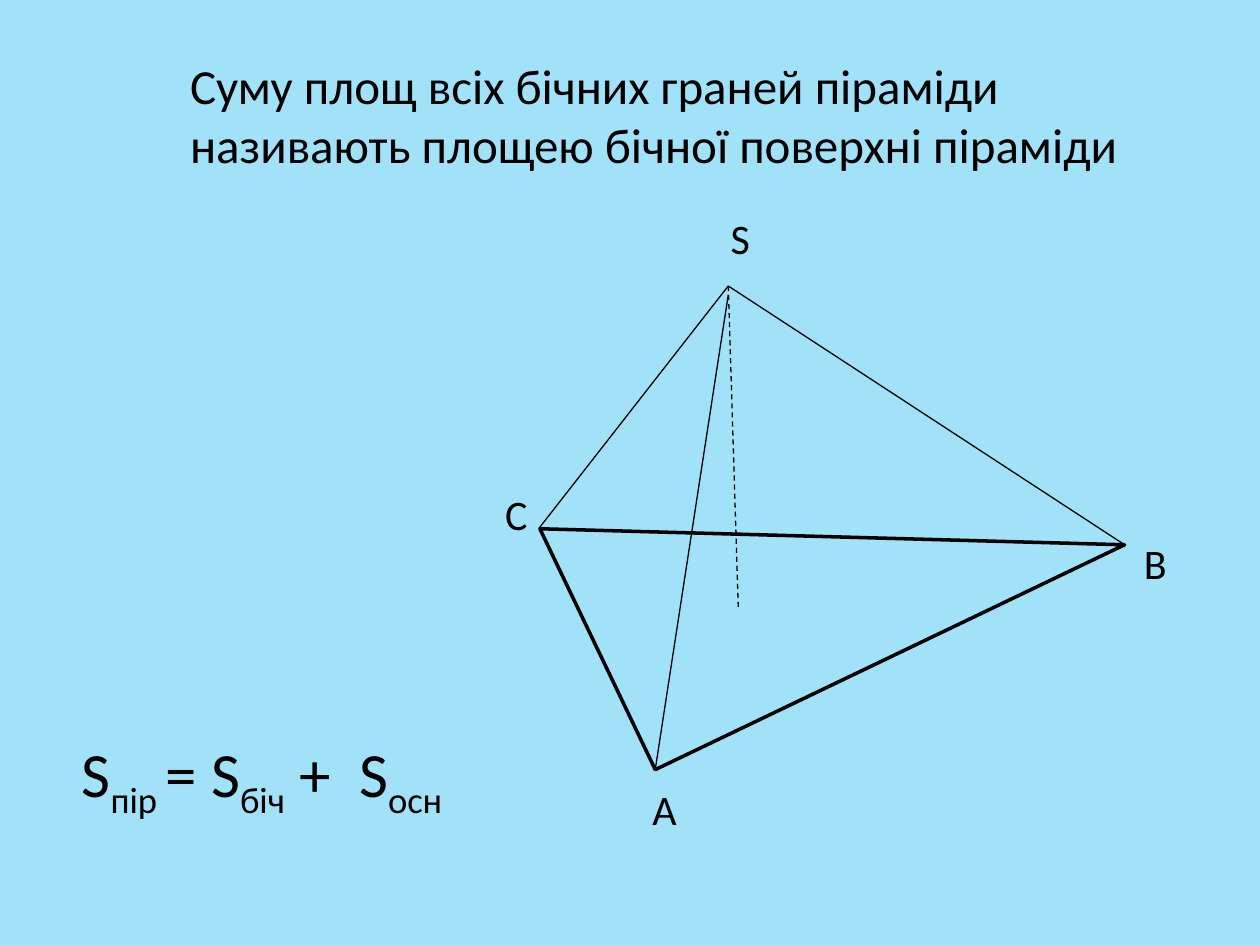
from pptx import Presentation
from pptx.dml.color import RGBColor
from pptx.enum.dml import MSO_LINE_DASH_STYLE as Dash
from pptx.enum.shapes import MSO_CONNECTOR, MSO_SHAPE
from pptx.enum.text import MSO_AUTO_SIZE
from pptx.oxml.ns import qn
from pptx.util import Inches, Pt
from lxml.etree import SubElement

BACKGROUND = "A1E2F9"
INK = "000000"
FONT = "Calibri"

DEFINITION = "Суму площ всіх бічних граней піраміди називають площею бічної поверхні піраміди"
# (text, is subscript)
FORMULA = [("S", False), ("пір ", True), ("= S", False), ("біч", True),
           (" +  S", False), ("осн", True)]

APEX = (5.78, 2.27)
VERTEX_A, VERTEX_B, VERTEX_C = (5.2, 6.11), (8.92, 4.32), (4.28, 4.19)
# (from, to, is dashed)
EDGES = [
    (APEX, (5.86, 4.84), True),
    ((5.78, 2.34), VERTEX_A, False),
    (APEX, VERTEX_B, False),
    (APEX, VERTEX_C, False),
]
BASE_BOX = (4.54, 3.2, 4.13, 2.12)
BASE_ROTATION = -25.6
VERTEX_LABELS = {"S": (5.7, 1.64), "А": (5.08, 6.17), "В": (8.98, 4.22), "С": (3.91, 3.83)}


def color(hex_string):
    return RGBColor.from_string(hex_string)


def add_text(slide, runs, box, size):
    """Add a text box; runs is a string or a list of (text, is subscript)."""
    frame = slide.shapes.add_textbox(*map(Inches, box)).text_frame
    frame.word_wrap = True
    frame.auto_size = MSO_AUTO_SIZE.SHAPE_TO_FIT_TEXT
    if isinstance(runs, str):
        runs = [(runs, False)]
    for text, subscript in runs:
        run = frame.paragraphs[0].add_run()
        run.text = text
        run.font.name = FONT
        run.font.size = Pt(size)
        run.font.color.rgb = color(INK)
        if subscript:
            run.font._element.set("baseline", "-25000")


def add_edge(slide, start, end, dashed):
    edge = slide.shapes.add_connector(MSO_CONNECTOR.STRAIGHT, *map(Inches, start + end))
    edge.line.color.rgb = color(INK)
    edge.line.width = Pt(0.75)
    if dashed:
        edge.line.dash_style = Dash.DASH
    SubElement(edge._element.spPr, qn("a:effectLst"))


def add_base(slide):
    base = slide.shapes.add_shape(MSO_SHAPE.RIGHT_TRIANGLE, *map(Inches, BASE_BOX))
    base.rotation = BASE_ROTATION
    base.shadow.inherit = False
    base.fill.background()
    base.line.color.rgb = color(INK)
    base.line.width = Pt(2)


def main():
    prs = Presentation()
    prs.slide_width, prs.slide_height = Inches(10), Inches(7.5)
    slide = prs.slides.add_slide(prs.slide_layouts[6])
    slide.background.fill.solid()
    slide.background.fill.fore_color.rgb = color(BACKGROUND)

    add_text(slide, DEFINITION, (1.41, 0.39, 7.89, 1.04), size=28)
    for start, end, dashed in EDGES:
        add_edge(slide, start, end, dashed)
    for label, corner in VERTEX_LABELS.items():
        add_text(slide, label, corner + (0.31, 0.5), size=24)
    add_base(slide)
    add_text(slide, FORMULA, (0.55, 5.78, 3.67, 0.71), size=36)
    prs.save("out.pptx")


if __name__ == "__main__":
    main()
